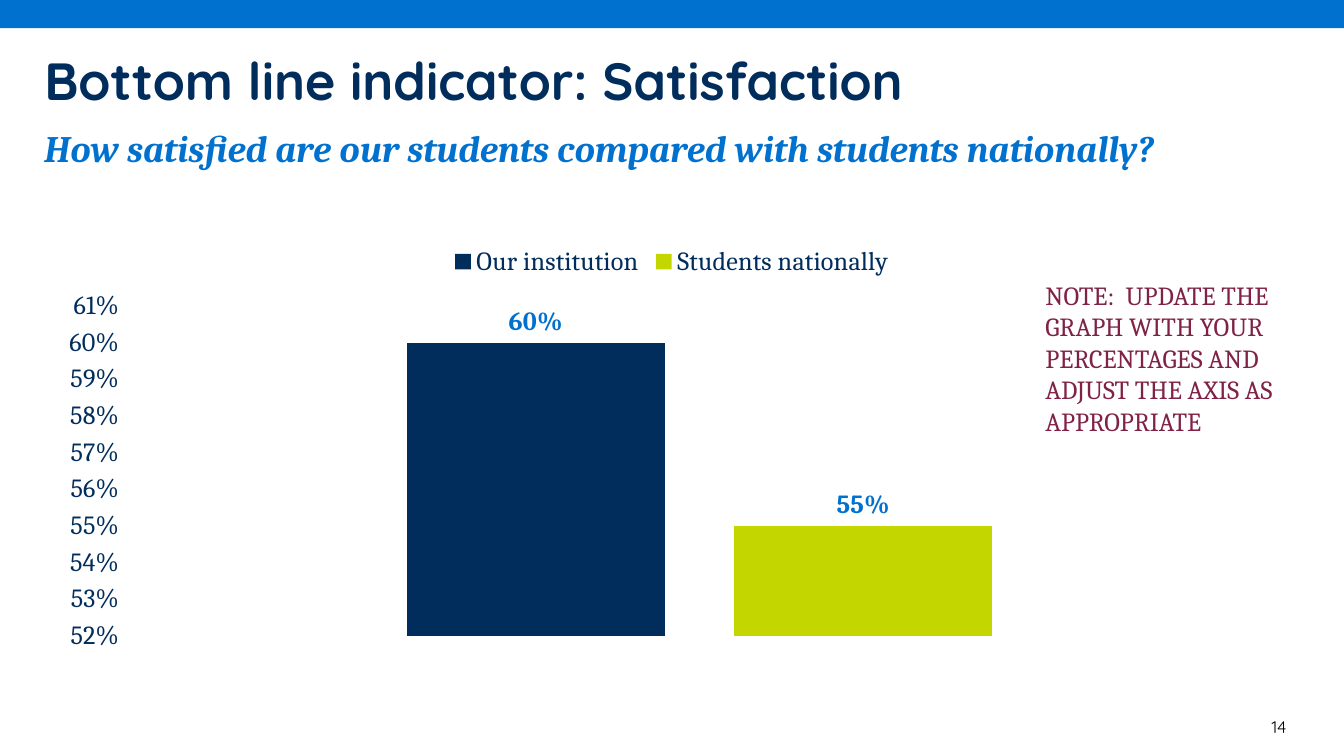
from pptx import Presentation
from pptx.chart.data import CategoryChartData
from pptx.dml.color import RGBColor
from pptx.enum.chart import XL_CHART_TYPE, XL_LABEL_POSITION, XL_LEGEND_POSITION, XL_TICK_MARK
from pptx.enum.shapes import MSO_SHAPE
from pptx.enum.text import MSO_ANCHOR, PP_ALIGN
from pptx.util import Inches, Pt

COLUMNS = XL_CHART_TYPE.COLUMN_CLUSTERED
LABEL_ABOVE = XL_LABEL_POSITION.OUTSIDE_END
LEGEND_TOP = XL_LEGEND_POSITION.TOP
NO_TICK = XL_TICK_MARK.NONE
RECTANGLE = MSO_SHAPE.RECTANGLE
TOP, MIDDLE = MSO_ANCHOR.TOP, MSO_ANCHOR.MIDDLE
LEFT, RIGHT = PP_ALIGN.LEFT, PP_ALIGN.RIGHT

WIDTH = 10
HEIGHT = WIDTH * 9 / 16
MARGIN = 0.33
CONTENT_WIDTH = WIDTH - 2 * MARGIN
COLORS = {"navy": "002D5C", "blue": "0071CE", "lime": "C3D600",
          "plum": "802245", "black": "000000"}
HEADING, BODY = "Quicksand", "Cambria"
SATISFACTION = [("Our institution", 0.60, "navy"),
                ("Students nationally", 0.55, "lime")]


def rgb(color):
    return RGBColor.from_string(COLORS[color])


def inches(box):
    return [Inches(length) for length in box]


def set_formats(target, formats):
    for attribute, value in formats.items():
        setattr(target, attribute, value)


def style_font(font, color, **formats):
    font.color.rgb = rgb(color)
    set_formats(font, formats)


def fill_text(shape, text, color, inset=None, anchor=TOP, align=LEFT, **formats):
    """Write one formatted paragraph; inset None keeps the default margins."""
    frame = shape.text_frame
    frame.word_wrap = True
    frame.vertical_anchor = anchor
    if inset is not None:
        for side in ("left", "top", "right", "bottom"):
            setattr(frame, f"margin_{side}", Inches(inset))
    paragraph = frame.paragraphs[0]
    paragraph.alignment = align
    run = paragraph.add_run()
    run.text = text
    style_font(run.font, color, **formats)


def add_text(slide, box, text, color, **formats):
    fill_text(slide.shapes.add_textbox(*inches(box)), text, color, **formats)


def add_top_band(slide, box):
    band = slide.shapes.add_shape(RECTANGLE, *inches(box))
    band.shadow.inherit = False
    band.fill.solid()
    band.fill.fore_color.rgb = rgb("blue")
    band.line.fill.background()


def place_title(slide, box, text):
    title = slide.shapes.title
    title.left, title.top, title.width, title.height = inches(box)
    fill_text(title, text, "navy", inset=0, anchor=MIDDLE,
              name=HEADING, size=Pt(28), bold=True)


def add_satisfaction_chart(slide, box):
    data = CategoryChartData(number_format="0%")
    data.categories = ["1"]
    for name, share, _ in SATISFACTION:
        data.add_series(name, [share])
    chart = slide.shapes.add_chart(COLUMNS, *inches(box), data).chart
    chart.has_title = False
    style_font(chart.font, "navy", name=BODY, size=Pt(10))

    chart.has_legend = True
    legend = chart.legend
    legend.position = LEGEND_TOP
    legend.include_in_layout = False
    style_font(legend.font, "navy", name=BODY, size=Pt(14))

    chart.category_axis.visible = False
    axis = chart.value_axis
    set_formats(axis, {"minimum_scale": 0.52, "maximum_scale": 0.61, "major_unit": 0.01,
                       "has_major_gridlines": False, "major_tick_mark": NO_TICK,
                       "minor_tick_mark": NO_TICK})
    axis.format.line.fill.background()
    set_formats(axis.tick_labels, {"number_format": "0%", "number_format_is_linked": False})
    style_font(axis.tick_labels.font, "navy", name=BODY, size=Pt(14))

    plot = chart.plots[0]
    set_formats(plot, {"gap_width": 219, "overlap": -27, "vary_by_categories": False})
    for series, (_, _, color) in zip(plot.series, SATISFACTION):
        series.format.fill.solid()
        series.format.fill.fore_color.rgb = rgb(color)
        labels = series.data_labels
        set_formats(labels, {"show_value": True, "number_format": "0%",
                             "number_format_is_linked": False, "position": LABEL_ABOVE})
        style_font(labels.font, "blue", name=BODY, size=Pt(14), bold=True)


def build_satisfaction_slide(deck):
    slide = deck.slides.add_slide(deck.slide_layouts[5])
    add_top_band(slide, (0, 0, WIDTH, 0.21))
    place_title(slide, (MARGIN, 0.36, CONTENT_WIDTH, 0.47),
                "Bottom line indicator: Satisfaction")
    add_text(slide, (MARGIN, 0.93, CONTENT_WIDTH, 0.84),
             "How satisfied are our students compared with students nationally?",
             "blue", inset=0, name=BODY, size=Pt(20), bold=True, italic=True)
    add_satisfaction_chart(slide, (MARGIN, 1.72, CONTENT_WIDTH, 3.19))
    add_text(slide, (7.68, 2.03, 2.25, 1.28),
             "NOTE:  UPDATE THE GRAPH WITH YOUR PERCENTAGES AND ADJUST THE AXIS AS APPROPRIATE",
             "plum", name=BODY, size=Pt(14))
    add_text(slide, (9.13, 5.28, 0.54, 0.25), "14", "black", align=RIGHT,
             name=HEADING, size=Pt(9))


def main():
    deck = Presentation()
    deck.slide_width, deck.slide_height = Inches(WIDTH), Inches(HEIGHT)
    build_satisfaction_slide(deck)
    deck.save("out.pptx")


if __name__ == "__main__":
    main()
